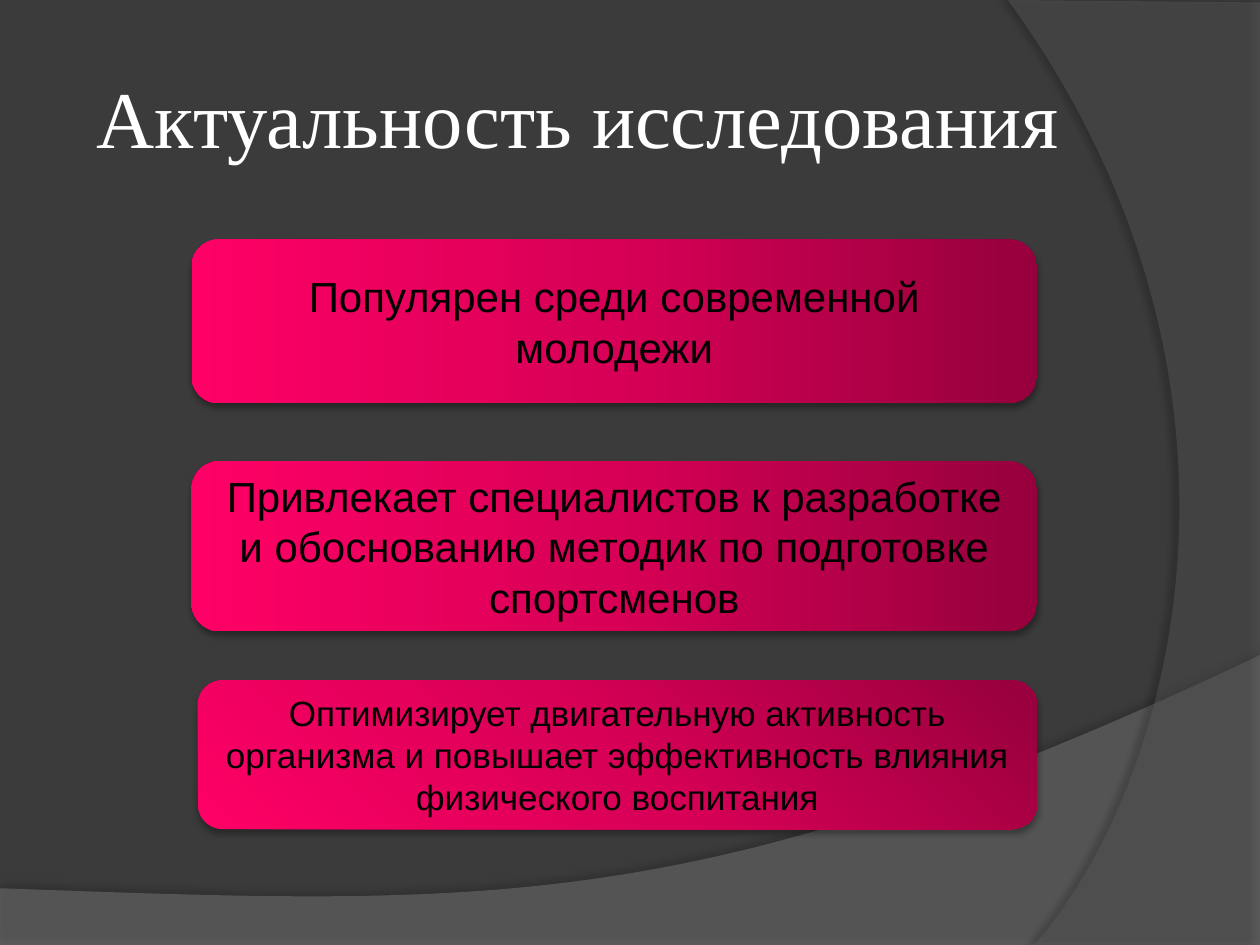
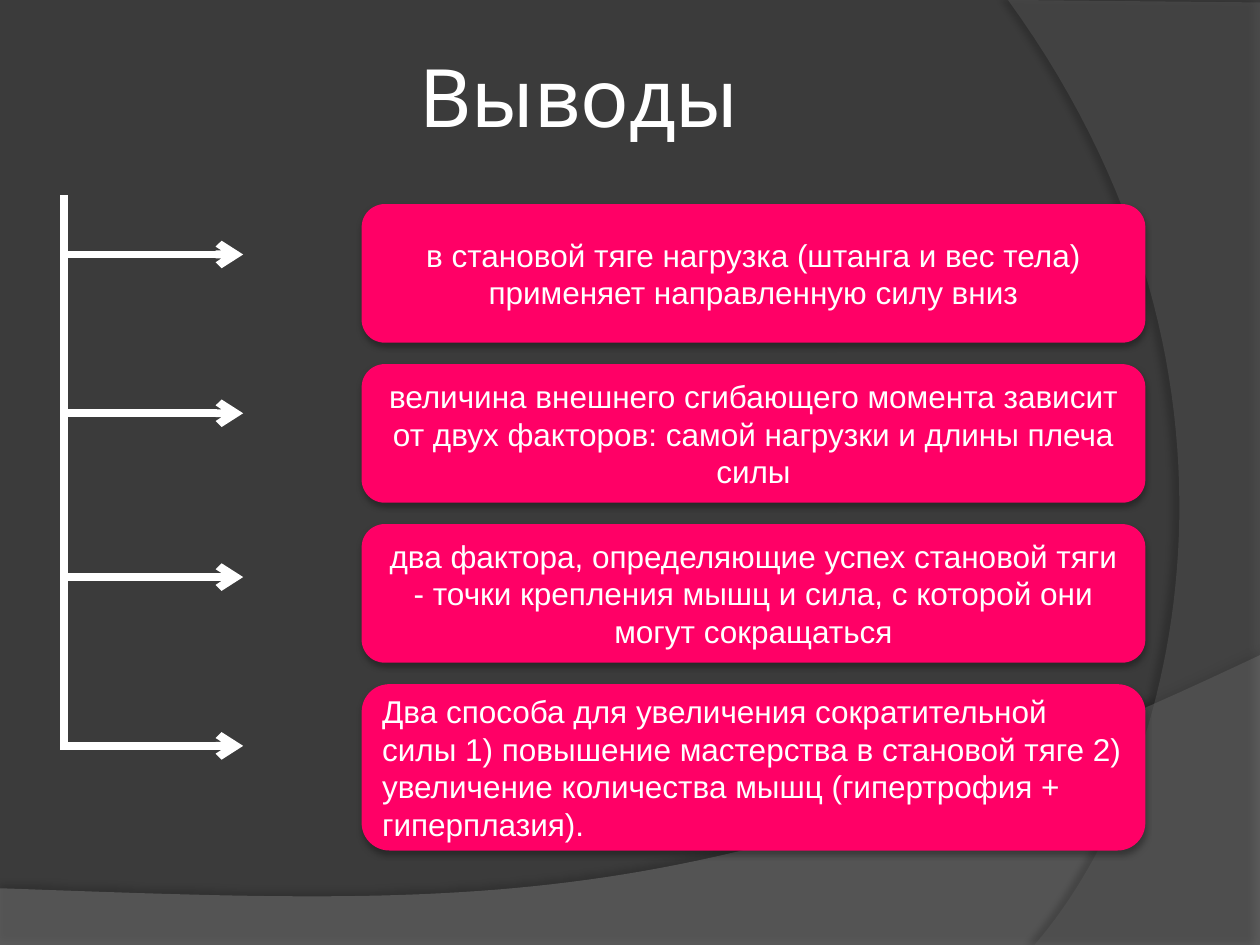
import collections

import lxml.etree
import pptx
import pptx.dml.color
import pptx.enum.shapes
import pptx.enum.text
import pptx.oxml
import pptx.oxml.ns
import pptx.util

RGBColor = pptx.dml.color.RGBColor
MSO_SHAPE = pptx.enum.shapes.MSO_SHAPE
PP_ALIGN = pptx.enum.text.PP_ALIGN
MSO_ANCHOR = pptx.enum.text.MSO_ANCHOR
qn = pptx.oxml.ns.qn

BACKGROUND = RGBColor(0x3B, 0x3B, 0x3B)
LOWER_WAVE = RGBColor(0x7F, 0x7F, 0x7F)
RIGHT_WAVE = RGBColor(0x5E, 0x5E, 0x5E)
WHITE = RGBColor(0xFF, 0xFF, 0xFF)
BLACK = RGBColor(0x00, 0x00, 0x00)
PINK = RGBColor(0xFF, 0x00, 0x66)
CRIMSON = RGBColor(0xD7, 0x00, 0x56)
WINE = RGBColor(0x97, 0x00, 0x3C)

COLUMNS, ROWS = 100, 75
SLIDE_WIDTH, SLIDE_HEIGHT = pptx.util.Inches(10), pptx.util.Inches(7.5)
BODY_FONT = "Arial"
LINEAR = '<a:lin ang="10800000" scaled="0"/>'
FROM_CORNER = '<a:path path="circle"><a:fillToRect l="100000" b="100000"/></a:path>'

Box = collections.namedtuple("Box", "left top width height")
Shadow = collections.namedtuple("Shadow", "opacity blur distance angle")
Card = collections.namedtuple("Card", "text top height size indent gradient align")
CARD_SHADOW = Shadow(32, 3.5, 2.2, 90)


def across(columns):
    """Convert grid columns to a length."""
    return round(columns * SLIDE_WIDTH / COLUMNS)


def down(rows):
    """Convert grid rows to a length."""
    return round(rows * SLIDE_HEIGHT / ROWS)


def place(box):
    """Convert a grid box to left, top, width and height."""
    return across(box.left), down(box.top), across(box.width), down(box.height)


def cast_shadow(shape, shadow):
    """Replace the theme shadow of a shape with the given one."""
    shape.shadow.inherit = False
    effects = shape.element.spPr.find(qn("a:effectLst"))
    outer = lxml.etree.SubElement(
        effects, qn("a:outerShdw"), blurRad=str(pptx.util.Pt(shadow.blur)),
        dist=str(pptx.util.Pt(shadow.distance)), dir=str(shadow.angle * 60000),
        algn="ctr", rotWithShape="0")
    colour = lxml.etree.SubElement(outer, qn("a:srgbClr"), val=str(BLACK))
    lxml.etree.SubElement(colour, qn("a:alpha"), val=str(shadow.opacity * 1000))


def fill_gradient(shape, direction):
    """Fill a shape from wine to pink in the given direction."""
    stops = "".join(
        f'<a:gs pos="{position}"><a:srgbClr val="{colour}"/></a:gs>'
        for position, colour in ((0, WINE), (50000, CRIMSON), (100000, PINK)))
    gradient = pptx.oxml.parse_xml(
        f'<a:gradFill {pptx.oxml.ns.nsdecls("a")} rotWithShape="1">'
        f"<a:gsLst>{stops}</a:gsLst>{direction}</a:gradFill>")
    shape.fill.background()
    properties = shape.element.spPr
    properties.replace(properties.find(qn("a:noFill")), gradient)


def add_run(paragraph, text, font, size, colour):
    """Add one formatted run to a paragraph."""
    run = paragraph.add_run()
    run.text = text
    run.font.name = font
    run.font.size = pptx.util.Pt(size)
    run.font.color.rgb = colour


def curve(start, first, second, end, steps=60):
    """Return the points of a cubic curve after its start."""
    points = []
    for step in range(1, steps + 1):
        t = step / steps
        weights = ((1 - t) ** 3, 3 * t * (1 - t) ** 2, 3 * t * t * (1 - t), t ** 3)
        points.append(tuple(
            sum(weight * value for weight, value in zip(weights, values))
            for values in zip(start, first, second, end)))
    return points


def add_wave(slide, points, colour, opacity, shadow):
    """Draw a translucent outline through grid points."""
    corners = [(across(x), down(y)) for x, y in points]
    builder = slide.shapes.build_freeform(*corners[0])
    builder.add_line_segments(corners[1:], close=True)
    wave = builder.convert_to_shape()
    wave.fill.solid()
    wave.fill.fore_color.rgb = colour
    tint = wave.element.spPr.find(f"{qn('a:solidFill')}/{qn('a:srgbClr')}")
    lxml.etree.SubElement(tint, qn("a:alpha"), val=str(opacity * 1000))
    wave.line.fill.background()
    cast_shadow(wave, shadow)
    return wave


def decorate_master(presentation, slide):
    """Set the shared background and move both waves to the master."""
    master = presentation.slide_master
    master.background.fill.solid()
    master.background.fill.fore_color.rgb = BACKGROUND
    lower = [(0, 70.5), (0, ROWS), (COLUMNS, ROWS)]
    lower += [(COLUMNS, 52)] + curve((COLUMNS, 52), (55.9, 72.9), (39.1, 71.9), (0, 70.5))
    right = [(COLUMNS, 0.2), (COLUMNS, ROWS), (82.1, ROWS)]
    right += curve((82.1, ROWS), (93.5, 61.9), (101.8, 30), (80, 0))
    waves = (
        add_wave(slide, lower, LOWER_WAVE, 45, Shadow(35, 4, 3.5, 270)),
        add_wave(slide, right, RIGHT_WAVE, 40, Shadow(45, 4, 4, 180)))
    for position, wave in enumerate(waves, start=2):
        master.shapes.element.insert(position, wave.element)


def add_title(slide, box, text, font):
    """Move and fill the title placeholder."""
    title = slide.shapes.title
    title.left, title.top, title.width, title.height = place(box)
    frame = title.text_frame
    frame.margin_left = frame.margin_right = pptx.util.Inches(0.05)
    frame.vertical_anchor = MSO_ANCHOR.MIDDLE
    paragraph = frame.paragraphs[0]
    paragraph.alignment = PP_ALIGN.CENTER
    add_run(paragraph, text, font, 46, WHITE)


def add_card(slide, region, card):
    """Draw one rounded card inside a region."""
    box = Box(region.left + card.indent, region.top + card.top,
              region.width - card.indent, card.height)
    shape = slide.shapes.add_shape(MSO_SHAPE.ROUNDED_RECTANGLE, *place(box))
    if card.gradient:
        fill_gradient(shape, card.gradient)
    else:
        shape.fill.solid()
        shape.fill.fore_color.rgb = PINK
    shape.line.fill.background()
    cast_shadow(shape, CARD_SHADOW)
    shape.text_frame.word_wrap = True
    shape.text_frame.vertical_anchor = MSO_ANCHOR.MIDDLE
    paragraph = shape.text_frame.paragraphs[0]
    paragraph.alignment = card.align
    add_run(paragraph, card.text, BODY_FONT, card.size,
            BLACK if card.gradient else WHITE)


def add_line(slide, start, end, arrow=False):
    """Draw a thick white line between two grid points."""
    line = slide.shapes.add_connector(
        pptx.enum.shapes.MSO_CONNECTOR.STRAIGHT,
        across(start[0]), down(start[1]), across(end[0]), down(end[1]))
    line.line.color.rgb = WHITE
    line.line.width = pptx.util.Pt(4.5)
    properties = line.element.spPr
    if arrow:
        lxml.etree.SubElement(properties.find(qn("a:ln")), qn("a:tailEnd"), type="arrow")
    lxml.etree.SubElement(properties, qn("a:effectLst"))


def add_arrow_tree(slide, box, branches):
    """Draw a trunk with an arrow at each branch row."""
    add_line(slide, (box.left, box.top), (box.left, box.top + box.height))
    for branch in branches:
        row = box.top + branch
        add_line(slide, (box.left, row), (box.left + box.width, row), arrow=True)


def fill_relevance(slide):
    """Build the slide on the relevance of the study."""
    add_title(slide, Box(5, 3, 81.7, 12.5), "Актуальность исследования", "Times New Roman")
    region = Box(15.2, 19, 67.1, 46.8)
    cards = (
        Card("Популярен среди современной молодежи",
             0, 13, 24, 0, LINEAR, PP_ALIGN.CENTER),
        Card("Привлекает специалистов к разработке и обоснованию методик "
             "по подготовке спортсменов",
             17.6, 13.5, 24, 0, LINEAR, PP_ALIGN.CENTER),
        Card("Оптимизирует двигательную активность организма и повышает "
             "эффективность влияния физического воспитания",
             35, 11.8, 20, 0.5, FROM_CORNER, PP_ALIGN.CENTER))
    for card in cards:
        add_card(slide, region, card)


def fill_conclusions(slide):
    """Build the slide with the conclusions."""
    add_title(slide, Box(5.1, 1.3, 81.7, 12.5), "Выводы", "Cabin")
    add_arrow_tree(slide, Box(5.1, 15.5, 14.2, 44), (4.7, 17.3, 30.3, 43.7))
    region = Box(28.7, 16.2, 62.2, 51.3)
    pitch = 12.7
    conclusions = (
        ("в становой тяге нагрузка (штанга и вес тела) применяет "
         "направленную силу вниз", 11, PP_ALIGN.CENTER),
        ("величина внешнего сгибающего момента зависит от двух факторов: "
         "самой нагрузки и длины плеча силы", 11, PP_ALIGN.CENTER),
        ("два фактора, определяющие успех становой тяги - точки крепления "
         "мышц и сила, с которой они могут сокращаться", 11, PP_ALIGN.CENTER),
        ("Два способа для увеличения сократительной силы 1) повышение "
         "мастерства в становой тяге 2) увеличение количества "
         "мышц (гипертрофия + гиперплазия).", 13.2, PP_ALIGN.LEFT))
    for index, (text, height, align) in enumerate(conclusions):
        add_card(slide, region, Card(text, index * pitch, height, 18, 0, None, align))


def main():
    """Build and save the presentation."""
    presentation = pptx.Presentation()
    presentation.slide_width, presentation.slide_height = SLIDE_WIDTH, SLIDE_HEIGHT
    title_only = presentation.slide_layouts.get_by_name("Title Only")
    relevance = presentation.slides.add_slide(title_only)
    decorate_master(presentation, relevance)
    fill_relevance(relevance)
    fill_conclusions(presentation.slides.add_slide(title_only))
    presentation.save("out.pptx")


if __name__ == "__main__":
    main()
